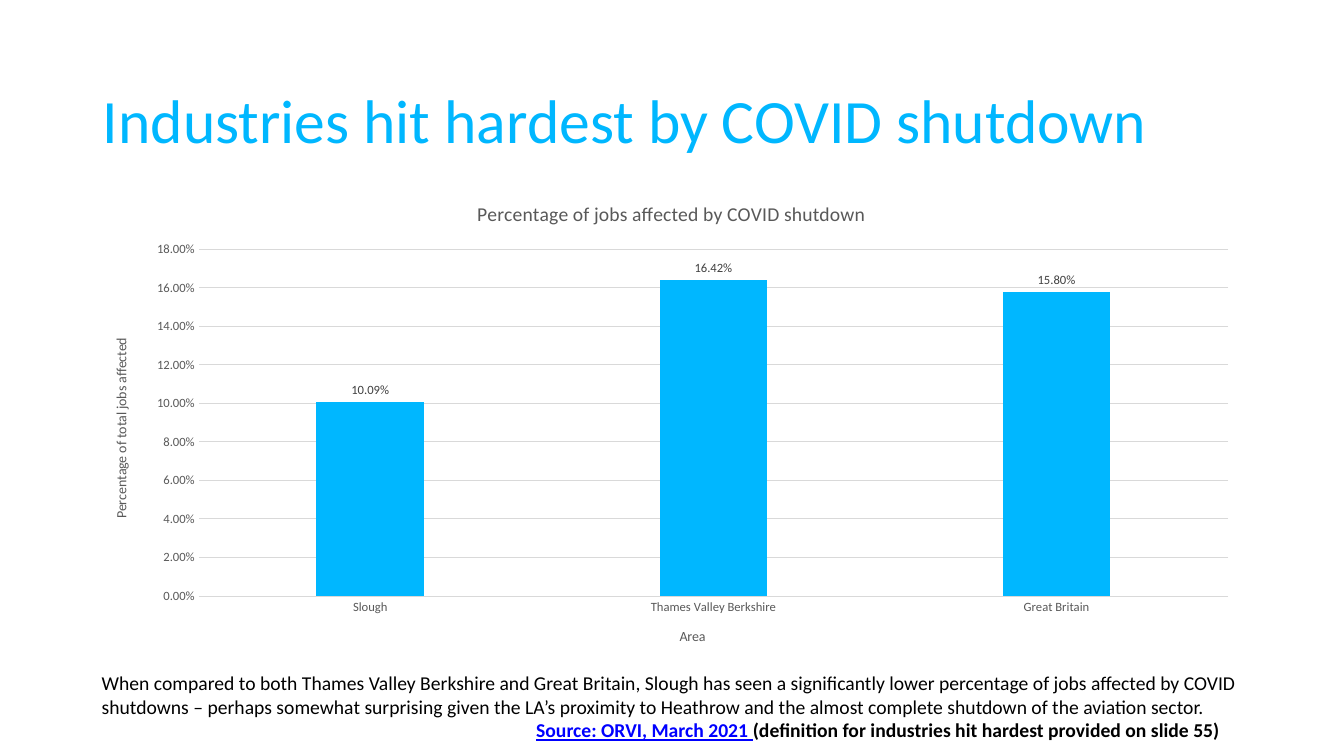
import pptx
import pptx.util
import pptx.chart.data
import pptx.dml.color
import pptx.enum.chart
import pptx.enum.text

Inches, Pt = pptx.util.Inches, pptx.util.Pt
BLUE, GREY, GRID = "00B7FF", "595959", "D9D9D9"


def rgb(value):
    return pptx.dml.color.RGBColor.from_string(value)


def style(font, color, **formats):
    font.color.rgb = rgb(color)
    for name, value in {"name": "Calibri", **formats}.items():
        setattr(font, name, value)


prs = pptx.Presentation()
prs.slide_width, prs.slide_height = Inches(13.33), Inches(7.5)
s = prs.slides.add_slide(prs.slide_layouts[5])

# Title
sp = s.shapes.title
sp.left, sp.top, sp.width, sp.height = [Inches(v) for v in (0.92, 0.61, 11.5, 1.24)]
tf = sp.text_frame
tf.vertical_anchor = pptx.enum.text.MSO_ANCHOR.MIDDLE
p = tf.paragraphs[0]
p.alignment = pptx.enum.text.PP_ALIGN.LEFT
p.line_spacing = 0.9
r = p.add_run()
r.text = "Industries hit hardest by COVID shutdown"
style(r.font, BLUE, size=Pt(44))

# Column chart
data = pptx.chart.data.CategoryChartData(number_format="0.00%")
data.categories = ["Slough", "Thames Valley Berkshire", "Great Britain"]
data.add_series("Series 1", [0.1009, 0.1642, 0.158])
chart = s.shapes.add_chart(
    pptx.enum.chart.XL_CHART_TYPE.COLUMN_CLUSTERED,
    Inches(0.91), Inches(1.8), Inches(11.5), Inches(4.8), data).chart
style(chart.font, "000000", size=Pt(10))
chart.has_legend = False

# Columns and their labels
plot = chart.plots[0]
plot.gap_width, plot.overlap, plot.vary_by_categories = 219, -27, False
fill = plot.series[0].format.fill
fill.solid()
fill.fore_color.rgb = rgb(BLUE)
labels = plot.series[0].data_labels
labels.show_value = True
labels.position = pptx.enum.chart.XL_LABEL_POSITION.OUTSIDE_END
labels.number_format, labels.number_format_is_linked = "0.00%", False
style(labels.font, "404040", size=Pt(9))

# Axes
cat, val = chart.category_axis, chart.value_axis
for axis in (cat, val):
    axis.major_tick_mark = axis.minor_tick_mark = pptx.enum.chart.XL_TICK_MARK.NONE
    style(axis.tick_labels.font, GREY, size=Pt(9))
val.minimum_scale, val.maximum_scale, val.major_unit = 0, 0.18, 0.02
val.tick_labels.number_format, val.tick_labels.number_format_is_linked = "0.00%", False
val.format.line.fill.background()
for line in (cat.format.line, val.major_gridlines.format.line):
    line.color.rgb = rgb(GRID)
    line.width = Pt(0.75)

# Chart and axis titles
for owner, text, size in (
        (chart, "Percentage of jobs affected by COVID shutdown", 14),
        (cat, "Area", 10),
        (val, "Percentage of total jobs affected", 10)):
    owner.has_title = True
    title = owner.chart_title if owner is chart else owner.axis_title
    r = title.text_frame.paragraphs[0].add_run()
    r.text = text
    style(r.font, GREY, size=Pt(size), bold=False)

# Commentary and source line
tf = s.shapes.add_textbox(Inches(0.91), Inches(6.61), Inches(11.5), Inches(0.81)).text_frame
tf.word_wrap = True
comment = tf.paragraphs[0]
source = tf.add_paragraph()
source._p.get_or_add_pPr().set("marL", str(Inches(4.31)))
for p, text, color, formats in (
        (comment, "When compared to both Thames Valley Berkshire and Great Britain, Slough has "
         "seen a significantly lower percentage of jobs affected by COVID shutdowns – perhaps "
         "somewhat surprising given the LA’s proximity to Heathrow and the almost complete "
         "shutdown of the aviation sector.", "000000", {}),
        (source, "Source: ORVI, March 2021 ", "0000FF", {"bold": True, "underline": True}),
        (source, "(definition for industries hit hardest provided on slide 55)", "000000",
         {"bold": True})):
    r = p.add_run()
    r.text = text
    style(r.font, color, size=Pt(14), **formats)

prs.save("out.pptx")
